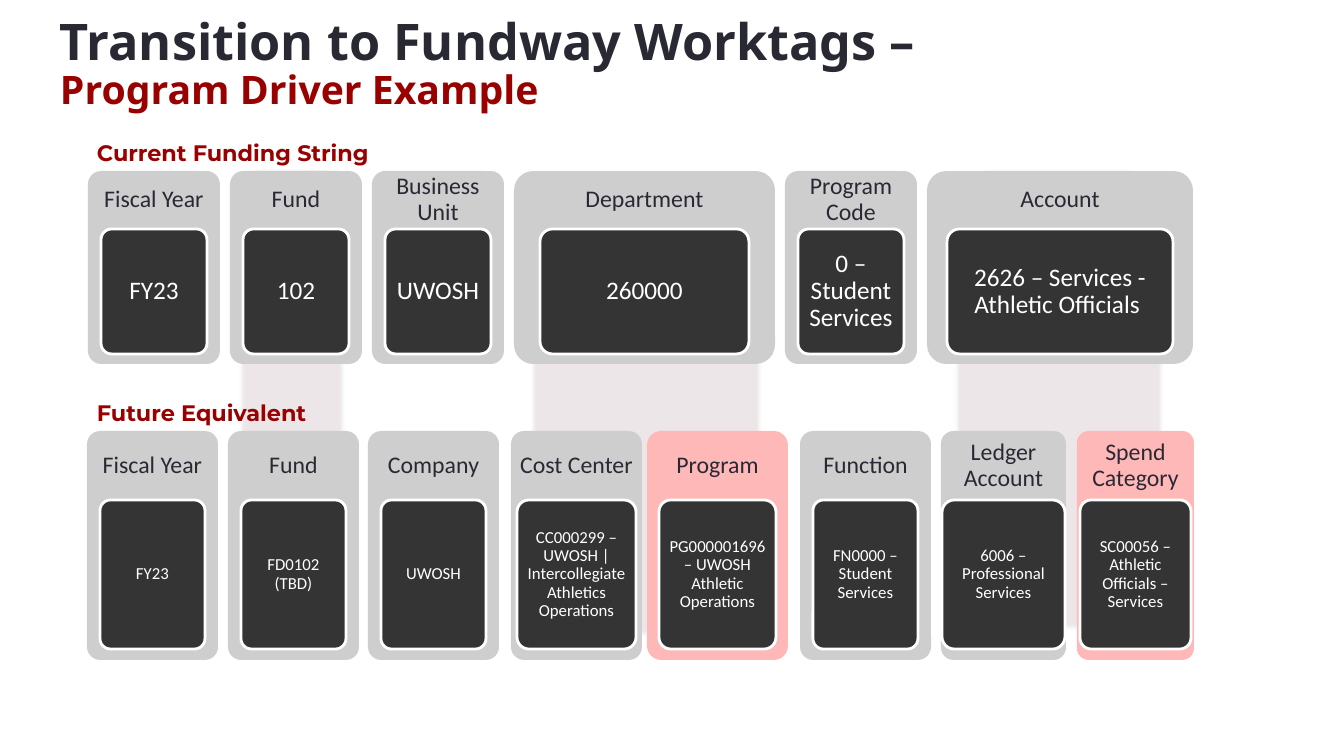
from lxml.etree import SubElement as Sub
from pptx import Presentation
from pptx.dml.color import RGBColor as Rgb
from pptx.enum.shapes import MSO_SHAPE as Form
from pptx.enum.text import MSO_ANCHOR as Anchor, PP_ALIGN as Align
from pptx.oxml.ns import qn
from pptx.util import Emu, Pt

# Content: cards are (head, value, left, width, inset, fill)
COLORS = {"ink": "292934", "red": "990000", "grey": "CECECE", "pink": "FFB8B8",
          "dark": "343434", "white": "FFFFFF", "band": "F4DCE2", "black": "000000"}
TITLE = [("Transition to Fundway Worktags –", 36, "ink"),
         ("Program Driver Example", 28, "red")]
BANDS = [(242, 170, 99), (958, 170, 202), (534, 176, 224)]
BAND_H = 455
ROWS = [
    {"label": "Current Funding String", "label_y": 137, "top": 171, "high": 193,
     "head": 58, "box": 125, "size": 18, "pad": (5, 4), "cards": [
         ("Fiscal Year", "FY23", 88, 132, 13, "grey"),
         ("Fund", "102", 230, 132, 13, "grey"),
         ("Business Unit", "UWOSH", 372, 132, 13, "grey"),
         ("Department", "260000", 514, 261, 26, "grey"),
         ("Program Code", "0 – Student Services", 785, 132, 13, "grey"),
         ("Account", "2626 – Services - Athletic Officials ", 927, 266, 20, "grey")]},
    {"label": "Future Equivalent", "label_y": 397, "top": 431, "high": 229,
     "head": 69, "box": 149, "size": 12, "pad": (3, 3), "cards": [
         ("Fiscal Year", "FY23", 87, 131, 13, "grey"),
         ("Fund", "FD0102 (TBD)", 228, 131, 13, "grey"),
         ("Company", "UWOSH", 368, 131, 13, "grey"),
         ("Cost Center", "CC000299 – UWOSH | Intercollegiate Athletics Operations",
          511, 131, 6, "grey"),
         ("Program", "PG000001696 – UWOSH Athletic Operations", 647, 141, 12, "pink"),
         ("Function", "FN0000 – Student Services", 800, 131, 13, "grey"),
         ("Ledger Account", "6006 – Professional Services", 941, 125, 1, "grey"),
         ("Spend Category", "SC00056 – Athletic Officials – Services",
          1077, 117, 3, "pink")]},
]


def px(n):
    return Emu(round(n * 914400 / 100.8))


def tint(name):
    return Rgb.from_string(COLORS[name])


def style(font, face, size, color, bold=False):
    font.name, font.size, font.bold = face, Pt(size), bold
    font.color.rgb = tint(color)


def block(form, x, y, w, h, fill, line=None):
    shape = slide.shapes.add_shape(form, px(x), px(y), px(w), px(h))
    shape.shadow.inherit = False
    shape.fill.solid()
    shape.fill.fore_color.rgb = tint(fill)
    if line:
        shape.line.color.rgb = tint(line)
        shape.line.width = Pt(2)
    else:
        shape.line.fill.background()
    if form == Form.ROUNDED_RECTANGLE:
        shape.adjustments[0] = 0.1
    return shape


def area(x, y, w, h):
    return slide.shapes.add_textbox(px(x), px(y), px(w), px(h))


def frame(shape, pad=(10, 5), anchor=Anchor.MIDDLE, align=Align.CENTER):
    body = shape.text_frame
    body.word_wrap = True
    body.vertical_anchor = anchor
    body.margin_left = body.margin_right = px(pad[0])
    body.margin_top = body.margin_bottom = px(pad[1])
    para = body.paragraphs[0]
    para.alignment, para.line_spacing = align, 0.9
    return para


def write(para, text, *look):
    para.text = text
    style(para.font, *look)


def alpha(node, percent):
    Sub(node, qn("a:alpha"), val=str(percent * 1000))


prs = Presentation()
prs.slide_width, prs.slide_height = px(1344), px(756)
slide = prs.slides.add_slide(prs.slide_layouts[6])

# Soft bands linking the two rows
for x, y, w in BANDS:
    band = block(Form.FLOWCHART_ALTERNATE_PROCESS, x, y, w, BAND_H, "band")
    props = band._element.spPr
    alpha(props.find(qn("a:solidFill")).find(qn("a:srgbClr")), 24)
    shade = Sub(props.find(qn("a:effectLst")), qn("a:outerShdw"), dir="5400000",
                blurRad=str(Pt(3.1)), dist=str(Pt(1.8)), rotWithShape="0")
    alpha(Sub(shade, qn("a:srgbClr"), val=COLORS["black"]), 35)

# Title
para = frame(area(50, 23, 1202, 84), align=Align.LEFT)
for i, (text, size, color) in enumerate(TITLE):
    if i:
        para.add_line_break()
    run = para.add_run()
    run.text = text
    style(run.font, "Noto Sans", size, color, True)

# Card rows
for row in ROWS:
    top, head = row["top"], row["head"]
    for name, value, x, w, inset, fill in row["cards"]:
        block(Form.ROUNDED_RECTANGLE, x, top, w, row["high"], fill)
        write(frame(area(x, top, w, head), (7, 7)), name, "Calibri", 17, "ink")
        box = block(Form.ROUNDED_RECTANGLE, x + inset, top + head,
                    w - 2 * inset, row["box"], "dark", "white")
        write(frame(box, row["pad"]), value, "Calibri", row["size"], "white")
    label = area(87, row["label_y"], 525, 38)
    write(frame(label, anchor=Anchor.TOP, align=Align.LEFT),
          row["label"], "Montserrat", 16, "red", True)

prs.save("out.pptx")
